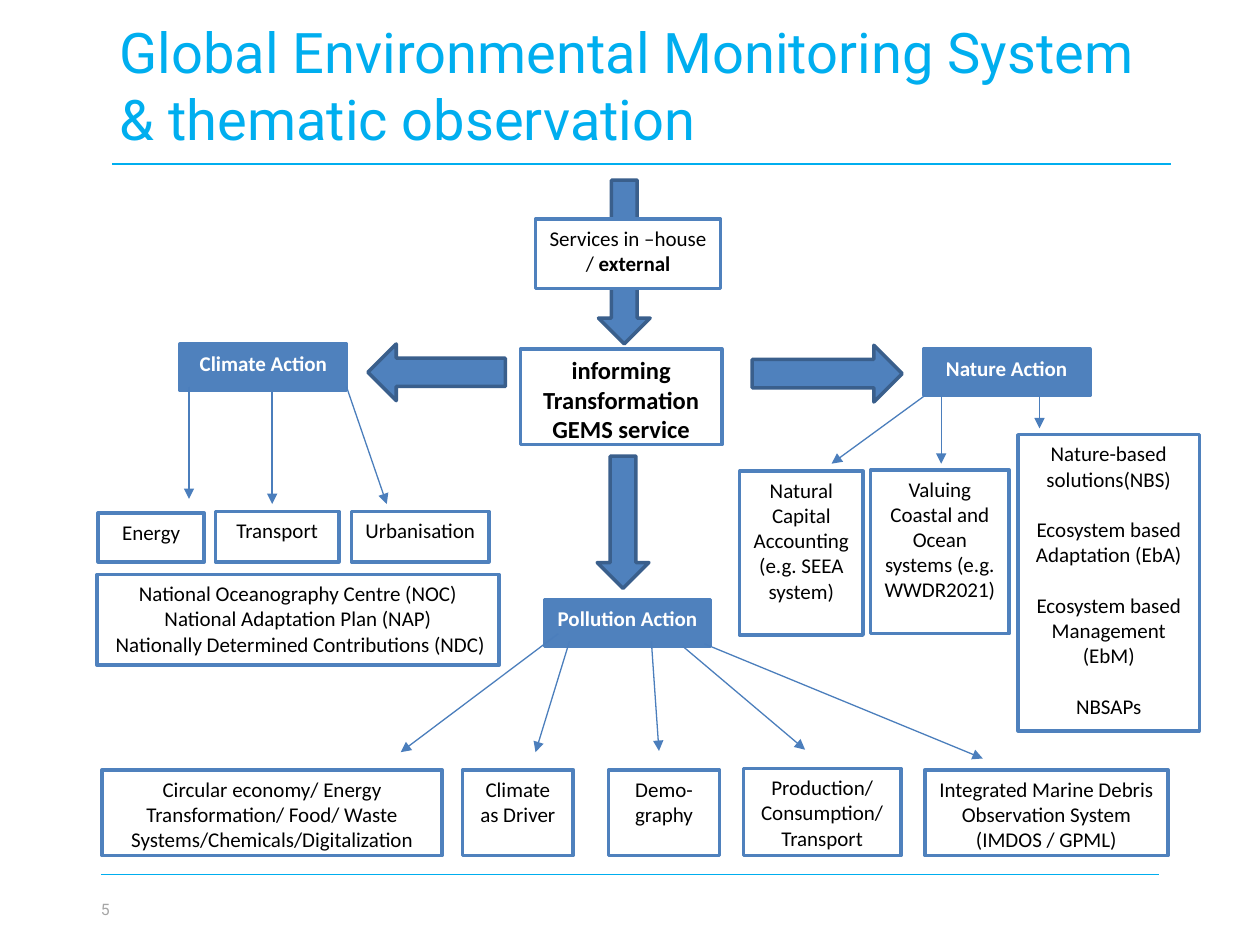
from lxml.etree import SubElement
from pptx import Presentation
from pptx.dml.color import RGBColor
from pptx.enum.shapes import MSO_CONNECTOR as Connector, MSO_SHAPE as Shape
from pptx.enum.text import MSO_ANCHOR as Anchor, MSO_AUTO_SIZE as AutoSize, PP_ALIGN as Align
from pptx.oxml.ns import qn
from pptx.util import Inches, Pt

CYAN = RGBColor(0x00, 0xAE, 0xEF)
BLUE = RGBColor(0x4F, 0x81, 0xBD)
DARK_BLUE = RGBColor(0x3A, 0x5F, 0x8C)
LINK_BLUE = RGBColor(0x4B, 0x7E, 0xBC)
GREY = RGBColor(0xA6, 0xA6, 0xA6)
WHITE = RGBColor(0xFF, 0xFF, 0xFF)
BLACK = RGBColor(0x00, 0x00, 0x00)

TITLE = "Global Environmental Monitoring System & thematic observation"
PAGE_NUMBER = "5"
RULES = [(0.89, 1.3), (0.8, 6.94)]  # left, top
RULE_WIDTH = 8.4

BLOCK_ARROWS = [
    (Shape.DOWN_ARROW, 4.75, 1.43, 0.41, 1.3),
    (Shape.LEFT_ARROW, 2.92, 2.73, 1.09, 0.45),
    (Shape.RIGHT_ARROW, 5.97, 2.74, 1.19, 0.45),
    (Shape.DOWN_ARROW, 4.74, 3.62, 0.41, 1.05),
]

ACTION_SIZE = (1.32, 0.37)
ACTIONS = [
    ("Climate Action", 1.43, 2.73),
    ("Nature Action", 7.33, 2.77),
    ("Pollution Action", 4.32, 4.76),
]

SERVICES = ("Services in –house / ", "external")
SERVICES_PLACE = (4.25, 1.74, 1.47, 0.55)
CORE = "informing Transformation GEMS service"
CORE_PLACE = (4.13, 2.77, 1.6, 0.76)

TOPICS = [  # text, (left, top, width, height)
    ("Energy", (0.78, 4.07, 0.84, 0.39)),
    ("Transport", (1.71, 4.06, 0.98, 0.4)),
    ("Urbanisation", (2.79, 4.06, 1.09, 0.4)),
    ("National Oceanography Centre (NOC)\nNational Adaptation Plan (NAP)\n"
     " Nationally Determined Contributions (NDC)", (0.77, 4.56, 3.19, 0.72)),
    ("Natural Capital Accounting (e.g. SEEA system)", (5.87, 3.74, 0.98, 1.3)),
    ("Valuing Coastal and Ocean systems (e.g. WWDR2021)", (6.91, 3.73, 1.1, 1.3)),
    ("Circular economy/ Energy Transformation/ Food/ Waste "
     "Systems/Chemicals/Digitalization", (0.81, 6.11, 2.7, 0.68)),
    ("Climate as Driver", (3.67, 6.11, 0.88, 0.68)),
    ("Demo-graphy", (4.83, 6.11, 0.88, 0.68)),
    ("Production/ Consumption/\nTransport", (5.9, 6.1, 1.25, 0.69)),
    ("Integrated Marine Debris Observation System (IMDOS / GPML)",
     (7.34, 6.11, 1.93, 0.68)),
]
NATURE_TOPICS = ("Nature-based solutions(NBS)\nEcosystem based Adaptation (EbA)\n"
                 "Ecosystem based Management (EbM)\nNBSAPs")
NATURE_PLACE = (8.08, 3.45, 1.44, 2.35)

LINKS = [  # from x, from y, to x, to y
    (1.5, 3.07, 1.5, 3.96), (2.16, 3.11, 2.16, 4), (2.75, 3.07, 3.07, 4),
    (7.34, 3.14, 6.6, 3.68), (7.47, 3.14, 7.47, 3.68), (8.25, 3.14, 8.25, 3.4),
    (4.43, 5.03, 3.18, 5.97), (4.52, 5.09, 4.25, 5.97), (5.17, 5.09, 5.23, 5.96),
    (5.42, 5.13, 6.39, 5.95), (5.59, 5.11, 7.8, 6.02),
]


def style_text(frame, size, color, font="Calibri", bold=False, align=Align.CENTER):
    frame.word_wrap = True
    for para in frame.paragraphs:
        para.alignment = align
        for span in para.runs:
            span.font.name = font
            span.font.size = Pt(size)
            span.font.bold = bold
            span.font.color.rgb = color


def set_insets(frame, top_bottom):
    frame.margin_left = frame.margin_right = 0
    frame.margin_top = frame.margin_bottom = Inches(top_bottom)


def add_block(page, kind, place, fill, outline):
    block = page.shapes.add_shape(kind, *map(Inches, place))
    block.shadow.inherit = False
    block.fill.solid()
    block.fill.fore_color.rgb = fill
    block.line.color.rgb = outline
    block.line.width = Pt(2)
    return block


def add_box(page, text, place, fill=WHITE, color=BLACK, size=12, bold=False):
    box = add_block(page, Shape.RECTANGLE, place, fill, BLUE)
    frame = box.text_frame
    frame.text = text
    frame.vertical_anchor = Anchor.TOP
    style_text(frame, size, color, bold=bold)
    return frame


def add_line(page, ends, color, width, arrow=False):
    line = page.shapes.add_connector(Connector.STRAIGHT, *map(Inches, ends))
    line.line.color.rgb = color
    line.line.width = Pt(width)
    if arrow:
        SubElement(line.line._get_or_add_ln(), qn("a:tailEnd"), type="triangle")
    SubElement(line._element.spPr, qn("a:effectLst"))


def add_header_and_footer(page):
    title = page.shapes.title
    title.left, title.top, title.width, title.height = map(Inches, (0.95, -0.02, 8.4, 1.31))
    frame = title.text_frame
    frame.text = TITLE
    frame.auto_size = AutoSize.NONE
    frame.vertical_anchor = Anchor.TOP
    set_insets(frame, 0.16)
    style_text(frame, 32, CYAN, "Roboto", align=Align.LEFT)

    number = page.shapes.add_textbox(*map(Inches, (0.8, 6.94, 8.4, 0.56)))
    frame = number.text_frame
    frame.text = PAGE_NUMBER
    frame.vertical_anchor = Anchor.MIDDLE
    set_insets(frame, 0.05)
    style_text(frame, 9, GREY, "Roboto", align=Align.LEFT)

    for left, top in RULES:
        add_line(page, (left, top, left + RULE_WIDTH, top), CYAN, 1)


def add_diagram(page):
    for kind, *place in BLOCK_ARROWS:
        add_block(page, kind, place, BLUE, DARK_BLUE)

    plain, strong = SERVICES
    frame = add_box(page, plain, SERVICES_PLACE)
    frame.paragraphs[0].add_run().text = strong
    style_text(frame, 12, BLACK)
    frame.paragraphs[0].runs[1].font.bold = True

    add_box(page, CORE, CORE_PLACE, size=14, bold=True)
    for text, left, top in ACTIONS:
        add_box(page, text, (left, top, *ACTION_SIZE), BLUE, WHITE, bold=True)
    for text, place in TOPICS:
        add_box(page, text, place)

    frame = add_box(page, NATURE_TOPICS, NATURE_PLACE)
    for para in frame.paragraphs[1:]:
        para.space_before = Pt(14.5)

    for ends in LINKS:
        add_line(page, ends, LINK_BLUE, 0.75, arrow=True)


def main():
    deck = Presentation()
    deck.slide_width, deck.slide_height = Inches(10), Inches(7.5)
    page = deck.slides.add_slide(deck.slide_layouts[5])
    add_header_and_footer(page)
    add_diagram(page)
    deck.save("out.pptx")


if __name__ == "__main__":
    main()
